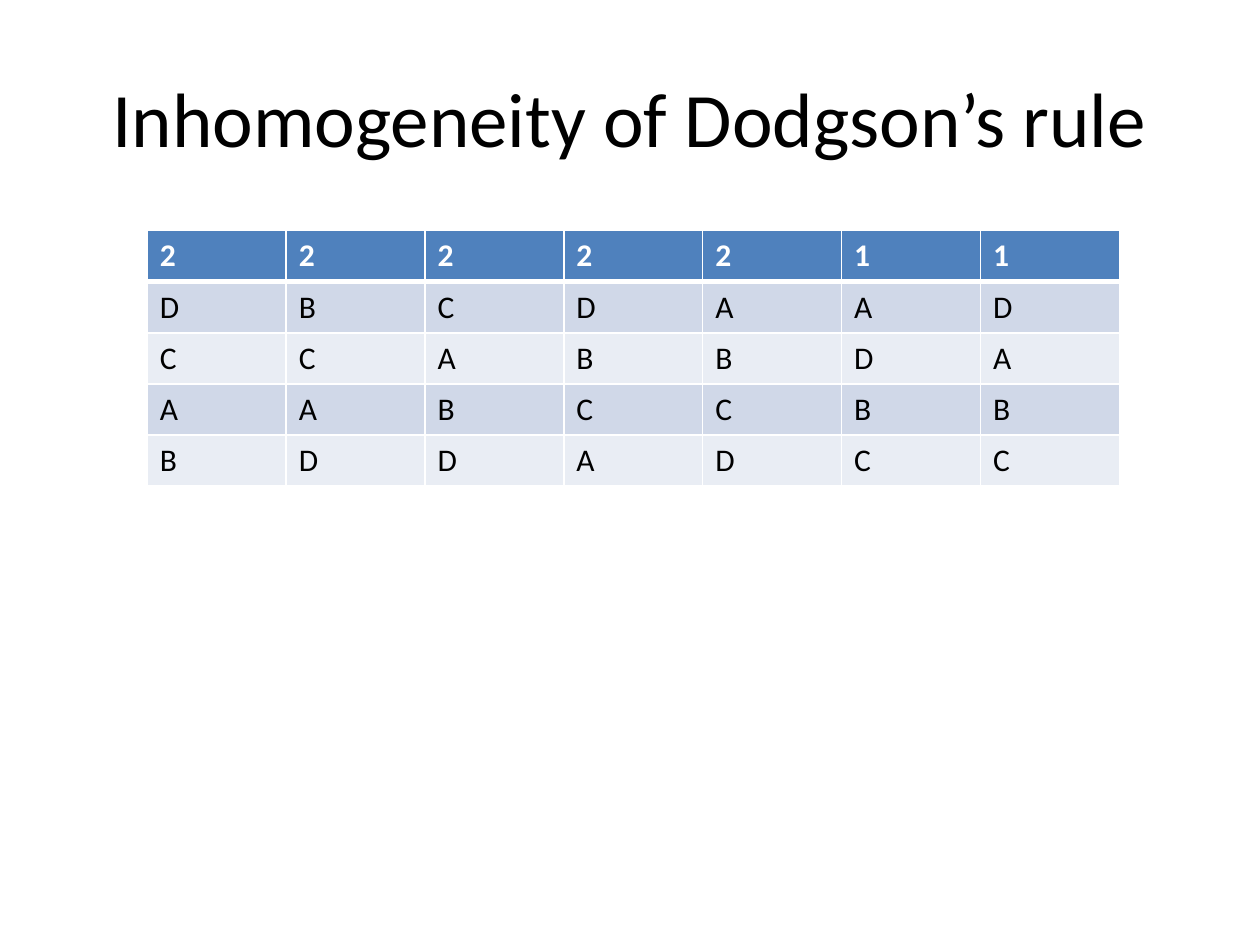
from dataclasses import dataclass

from lxml import etree
from pptx import Presentation
from pptx import util as u
from pptx.dml.color import RGBColor
from pptx.enum import text
from pptx.oxml.ns import qn


@dataclass(frozen=True)
class Theme:
    font: str = "Calibri"
    title_size: int = 44
    table_size: int = 18
    ink: str = "000000"
    white: str = "FFFFFF"
    header_fill: str = "4F81BD"
    band_fills: tuple[str, str] = ("D0D8E8", "E9EDF4")
    thin_line: int = 1
    thick_line: int = 3


@dataclass(frozen=True)
class Ballot:
    """A group of voters and their ranking, best candidate first."""
    voters: int
    ranking: str


@dataclass(frozen=True)
class CellStyle:
    fill: str
    ink: str
    bold: bool
    top: int
    bottom: int


THEME = Theme()
BALLOTS = [
    Ballot(2, "DCAB"),
    Ballot(2, "BCAD"),
    Ballot(2, "CABD"),
    Ballot(2, "DBCA"),
    Ballot(2, "ABCD"),
    Ballot(1, "ADBC"),
    Ballot(1, "DABC"),
]
COLUMN_WIDTH = u.Cm(2.8)
ROW_HEIGHT = u.Cm(1.03)


def add_run(paragraph, words: str, size: int, color: str, bold: bool = False) -> None:
    run = paragraph.add_run()
    run.text = words
    run.font.name = THEME.font
    run.font.size = u.Pt(size)
    run.font.bold = bold
    run.font.color.rgb = RGBColor.from_string(color)


def add_border(cell, side: str, width: int) -> None:
    properties = cell._tc.get_or_add_tcPr()
    line = etree.SubElement(properties, qn(f"a:ln{side}"), w=str(u.Pt(width)))
    fill = etree.SubElement(line, qn("a:solidFill"))
    etree.SubElement(fill, qn("a:srgbClr"), val=THEME.white)


def row_style(row: int) -> CellStyle:
    if row == 0:
        return CellStyle(THEME.header_fill, THEME.white, True,
                         THEME.thin_line, THEME.thick_line)
    top = THEME.thick_line if row == 1 else THEME.thin_line
    return CellStyle(THEME.band_fills[(row - 1) % 2], THEME.ink, False,
                     top, THEME.thin_line)


def fill_cell(cell, words: str, style: CellStyle) -> None:
    add_run(cell.text_frame.paragraphs[0], words, THEME.table_size,
            style.ink, style.bold)
    # Borders come before the fill in the cell properties
    for side, width in (("L", THEME.thin_line), ("R", THEME.thin_line),
                        ("T", style.top), ("B", style.bottom)):
        add_border(cell, side, width)
    cell.fill.solid()
    cell.fill.fore_color.rgb = RGBColor.from_string(style.fill)


def add_title(slide, words: str) -> None:
    title = slide.shapes.title
    title.left, title.top = u.Cm(1.27), u.Cm(0.76)
    title.width, title.height = u.Cm(22.86), u.Cm(3.18)
    title.text_frame.vertical_anchor = text.MSO_ANCHOR.MIDDLE
    paragraph = title.text_frame.paragraphs[0]
    paragraph.alignment = text.PP_ALIGN.CENTER
    add_run(paragraph, words, THEME.title_size, THEME.ink)


def add_ballot_table(slide, ballots: list[Ballot]) -> None:
    row_count = 1 + len(ballots[0].ranking)
    table = slide.shapes.add_table(
        row_count, len(ballots), u.Cm(2.97), u.Cm(4.65),
        COLUMN_WIDTH * len(ballots), ROW_HEIGHT * row_count).table
    for column, ballot in enumerate(ballots):
        for row, words in enumerate([str(ballot.voters), *ballot.ranking]):
            fill_cell(table.cell(row, column), words, row_style(row))


def main() -> None:
    presentation = Presentation()
    presentation.slide_width, presentation.slide_height = u.Cm(25.4), u.Cm(19.05)
    # Title Only layout
    slide = presentation.slides.add_slide(presentation.slide_layouts[5])
    add_title(slide, "Inhomogeneity of Dodgson’s rule")
    add_ballot_table(slide, BALLOTS)
    presentation.save("out.pptx")


if __name__ == "__main__":
    main()
